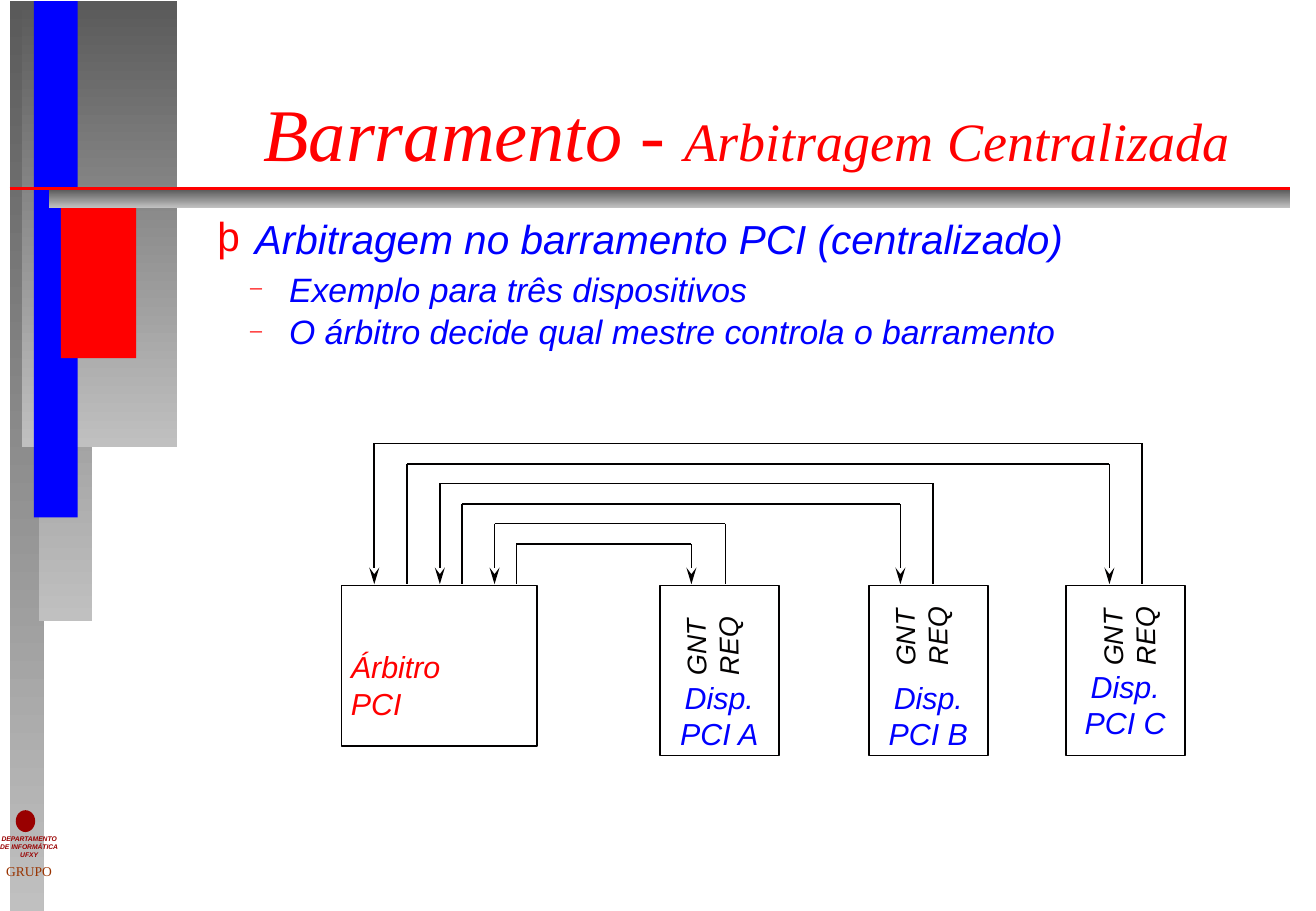
from lxml import etree
from pptx import Presentation
from pptx import util as u
from pptx.dml.color import RGBColor
from pptx.enum import shapes, text
from pptx.oxml.ns import qn

PX = 9144  # 100 px to the inch
RGB = RGBColor.from_string
RED, BLUE, BLACK, MAROON = "FF0000", "0000FF", "020000", "990000"
DARK, LIGHT = "5A5A5A", "C0C0C0"

prs = Presentation()
prs.slide_width, prs.slide_height = 1083 * PX, 750 * PX
s = prs.slides.add_slide(prs.slide_layouts[5])


def line(x1, y1, x2, y2, color, width=1, arrow=False):
    c = s.shapes.add_connector(shapes.MSO_CONNECTOR.STRAIGHT,
                               x1 * PX, y1 * PX, x2 * PX, y2 * PX)
    c.line.color.rgb = RGB(color)
    c.line.width = u.Pt(width)
    if arrow:
        etree.SubElement(c.line._get_or_add_ln(), qn("a:tailEnd"),
                         type="stealth", w="med", len="lg")
    etree.SubElement(c._element.spPr, qn("a:effectLst"))


def label(x, y, w, h, lines, size, color, font="Arial", italic=True,
          align=text.PP_ALIGN.LEFT, wrap=False, inset=(10, 5)):
    sp = s.shapes.add_textbox(x * PX, y * PX, w * PX, h * PX)
    tf = sp.text_frame
    tf.word_wrap = wrap
    tf.margin_left = tf.margin_right = inset[0] * PX
    tf.margin_top = tf.margin_bottom = inset[1] * PX
    tf.text = "\n".join(lines)
    for p in tf.paragraphs:
        p.alignment = align
        f = p.runs[0].font
        f.name, f.size, f.italic = font, u.Pt(size), italic
        f.color.rgb = RGB(color)
    return sp


# Side bars and the shaded rule under the title
for x, y, w, h, fill in [
    (8, 1, 28, 749, None),
    (32, 1, 44, 510, None),
    (18, 1, 128, 367, None),
    (28, 1, 36, 425, BLUE),
    (50, 162, 62, 133, RED),
    (40, 156, 1022, 15, None),
]:
    bar = s.shapes.add_shape(shapes.MSO_SHAPE.RECTANGLE, x * PX, y * PX, w * PX, h * PX)
    bar.shadow.inherit = False
    bar.line.fill.background()
    if fill:
        bar.fill.solid()
        bar.fill.fore_color.rgb = RGB(fill)
    else:
        bar.fill.gradient()
        bar.fill.gradient_angle = 270
        for stop, color in zip(bar.fill.gradient_stops, (DARK, LIGHT)):
            stop.color.rgb = RGB(color)
line(8, 155, 1062, 155, RED, width=1.5)

# Department mark
mark = s.shapes.add_shape(shapes.MSO_SHAPE.OVAL, 13 * PX, 667 * PX, 16 * PX, 18 * PX)
mark.shadow.inherit = False
mark.fill.solid()
mark.fill.fore_color.rgb = RGB(MAROON)
mark.line.fill.background()
dept = label(0, 687, 48, 20, ["DEPARTAMENTO", "DE INFORMÁTICA", "UFXY"], 4, MAROON,
             align=text.PP_ALIGN.CENTER, inset=(0, 0))
for p in dept.text_frame.paragraphs:
    p.runs[0].font.bold = True
group = label(5, 707, 43, 20, ["GRUPO"], 8, "993300", "Times New Roman",
              italic=False, inset=(0, 0))
group.text_frame.vertical_anchor = text.MSO_ANCHOR.MIDDLE

# Title
title = s.shapes.title
title.left, title.top, title.width, title.height = 207 * PX, 23 * PX, 867 * PX, 127 * PX
tf = title.text_frame
tf.auto_size = text.MSO_AUTO_SIZE.NONE
tf.vertical_anchor = text.MSO_ANCHOR.BOTTOM
p = tf.paragraphs[0]
p.alignment = text.PP_ALIGN.LEFT
for words, size in [("Barramento - ", 44), ("Arbitragem Centralizada", 32)]:
    r = p.add_run()
    r.text = words
    r.font.name, r.font.size, r.font.italic = "Times New Roman", u.Pt(size), True
    r.font.color.rgb = RGB(RED)

# Bulleted text
body = label(169, 171, 760, 123, [
    "Arbitragem no barramento PCI (centralizado)",
    "Exemplo para três dispositivos",
    "O árbitro decide qual mestre controla o barramento",
], 24, BLUE, wrap=True)
for p, (size, before, margin, hang, char, scale) in zip(body.text_frame.paragraphs, [
    (24, 0, 31, 31, "þ", 100),
    (20, 4, 59, 32, "─", 50),
    (20, 1, 59, 32, "─", 50),
]):
    p.runs[0].font.size = u.Pt(size)
    p.space_before = u.Pt(before)
    pPr = p._p.get_or_add_pPr()
    pPr.set("marL", str(margin * PX))
    pPr.set("indent", str(-hang * PX))
    etree.SubElement(etree.SubElement(pPr, qn("a:buClr")), qn("a:srgbClr"), val=RED)
    etree.SubElement(pPr, qn("a:buSzPct"), val=str(scale * 1000))
    etree.SubElement(pPr, qn("a:buFont"), typeface="Arial")
    etree.SubElement(pPr, qn("a:buChar"), char=char)

# Arbiter and device boxes
for x, w, h in [(281, 161, 132), (543, 98, 140), (715, 98, 140), (877, 98, 140)]:
    box = s.shapes.add_shape(shapes.MSO_SHAPE.RECTANGLE, x * PX, 482 * PX, w * PX, h * PX)
    box.shadow.inherit = False
    box.fill.background()
    box.line.color.rgb = RGB(BLACK)
    box.line.width = u.Pt(1)

# REQ and GNT lines, outermost first; REQ points to the arbiter, GNT to the device
for i, (arbiter_x, device_x) in enumerate([
    (308, 940), (335, 913), (362, 768), (380, 741), (407, 597), (425, 569),
]):
    y = round(365 + 16.6 * i)
    is_req = i % 2 == 0
    line(arbiter_x, y, device_x, y, BLACK)
    line(arbiter_x, y, arbiter_x, 481, BLACK, arrow=is_req)
    line(device_x, y, device_x, 481, BLACK, arrow=not is_req)

# Box labels
label(279, 529, 130, 70, ["Árbitro PCI"], 18, RED, wrap=True)
for name, signal_x, signal_y, name_x, name_y in [
    ("A", 552, 500, 543, 554),
    ("B", 724, 492, 715, 554),
    ("C", 895, 492, 877, 545),
]:
    signals = label(signal_x, signal_y, 68, 64, ["GNT", "REQ"], 16, BLACK)
    signals.rotation = 269
    label(name_x, name_y, 98, 70, ["Disp.", f"PCI {name}"], 18, BLUE,
          align=text.PP_ALIGN.CENTER)

prs.save("out.pptx")
